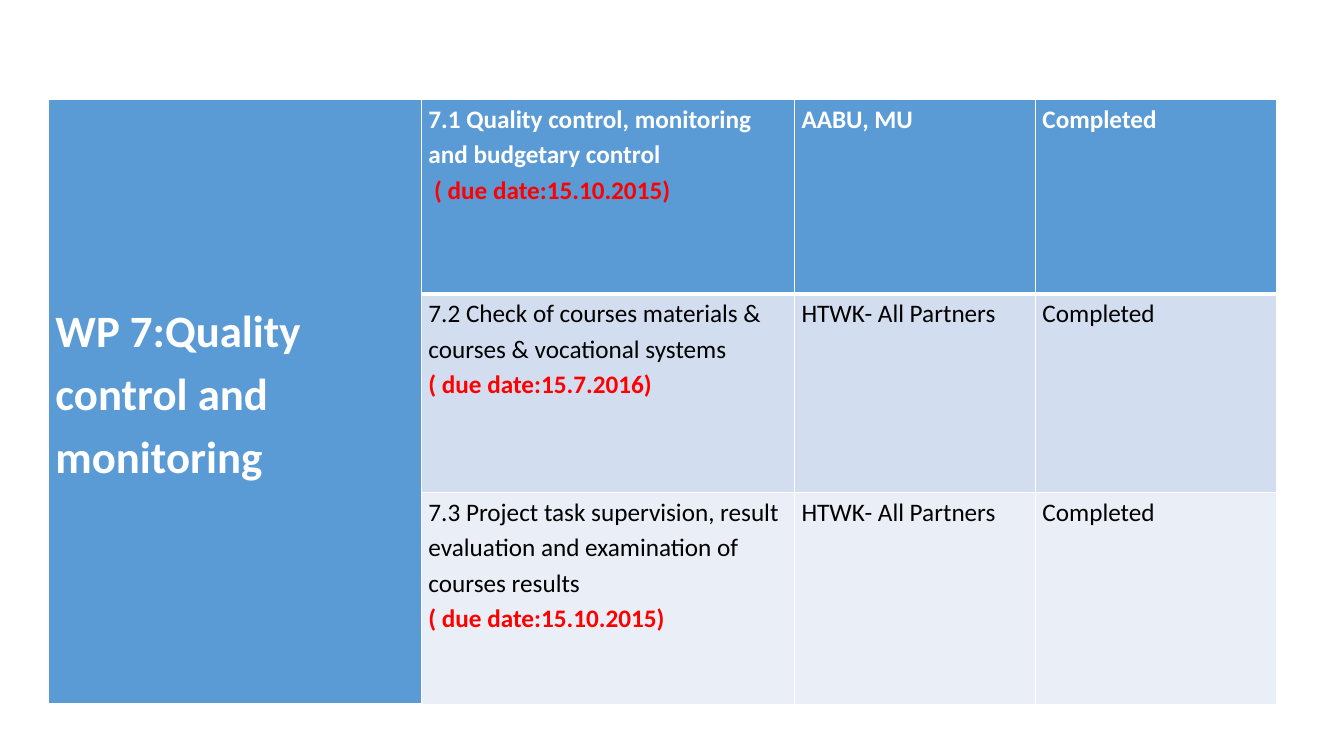
from lxml import etree
from pptx import Presentation
from pptx.dml.color import RGBColor
from pptx.enum.text import MSO_ANCHOR
from pptx.oxml.ns import qn
from pptx.util import Inches, Pt

MIDDLE = MSO_ANCHOR.MIDDLE
TOP = MSO_ANCHOR.TOP
WHITE, BLACK, RED = "FFFFFF", "000000", "FF0000"
COLUMN_WIDTHS = (3.7, 3.7, 2.39, 2.39)
ROW_HEIGHTS = (1.93, 1.97, 2.1)
ROW_FILLS = ("5B9BD5", "D2DEEF", "EAEFF7")
TITLE = "WP 7:Quality control and monitoring"
TASKS = (
    ("7.1 Quality control, monitoring and budgetary control",
     " ( due date:15.10.2015)", "AABU, MU", "Completed"),
    ("7.2 Check of courses materials & courses & vocational systems",
     "( due date:15.7.2016)", "HTWK- All Partners", "Completed"),
    ("7.3 Project task supervision, result evaluation and examination of courses results",
     "( due date:15.10.2015)", "HTWK- All Partners", "Completed"),
)


def rgb(value):
    return RGBColor.from_string(value)


def set_attributes(target, values):
    for name, value in values.items():
        setattr(target, name, value)


def add_borders(cell, bottom_width):
    """Draw white cell borders, with their own width at the bottom."""
    properties = cell._tc.get_or_add_tcPr()
    widths = {"a:lnL": 1, "a:lnR": 1, "a:lnT": 1, "a:lnB": bottom_width}
    for index, (tag, width) in enumerate(widths.items()):
        line = etree.Element(qn(tag), w=str(Pt(width)))
        fill = etree.SubElement(line, qn("a:solidFill"))
        etree.SubElement(fill, qn("a:srgbClr"), val=WHITE)
        properties.insert(index, line)


def format_cell(cell, fill, bottom_width=1):
    set_attributes(cell, {
        "margin_left": Inches(0.07), "margin_right": Inches(0.07),
        "margin_top": 0, "margin_bottom": 0, "vertical_anchor": TOP,
    })
    cell.fill.solid()
    cell.fill.fore_color.rgb = rgb(fill)
    add_borders(cell, bottom_width)


def write_paragraph(paragraph, text, color, bold, size=18, space_after=0):
    set_attributes(paragraph, {"line_spacing": 1.15, "space_after": Pt(space_after)})
    run = paragraph.add_run()
    run.text = text
    set_attributes(run.font, {"name": "Calibri", "size": Pt(size), "bold": bold})
    run.font.color.rgb = rgb(color)


def fill_task_row(table, row, task):
    is_header = row == 0
    color = WHITE if is_header else BLACK
    description, due_date, *details = task
    frame = table.cell(row, 1).text_frame
    write_paragraph(frame.paragraphs[0], description, color, is_header)
    write_paragraph(frame.add_paragraph(), due_date, RED, True)
    for column, text in enumerate(details, start=2):
        paragraph = table.cell(row, column).text_frame.paragraphs[0]
        write_paragraph(paragraph, text, color, is_header, space_after=10)


def fill_title_cell(table):
    cell = table.cell(0, 0)
    cell.merge(table.cell(len(TASKS) - 1, 0))
    set_attributes(cell, {"vertical_anchor": MIDDLE, "margin_bottom": Inches(0.23)})
    write_paragraph(cell.text_frame.paragraphs[0], TITLE, WHITE, True, size=32)


def add_work_package_table(slide):
    table = slide.shapes.add_table(
        len(ROW_HEIGHTS), len(COLUMN_WIDTHS), Inches(0.48), Inches(0.99),
        Inches(sum(COLUMN_WIDTHS)), Inches(sum(ROW_HEIGHTS))).table
    for column, width in zip(table.columns, COLUMN_WIDTHS):
        column.width = Inches(width)
    for row, (height, fill, task) in enumerate(zip(ROW_HEIGHTS, ROW_FILLS, TASKS)):
        table.rows[row].height = Inches(height)
        for column, cell in enumerate(table.rows[row].cells):
            format_cell(cell, ROW_FILLS[0] if column == 0 else fill,
                        bottom_width=3 if row == 0 else 1)
        fill_task_row(table, row, task)
    fill_title_cell(table)


def main():
    presentation = Presentation()
    set_attributes(presentation, {"slide_width": Inches(13.33), "slide_height": Inches(7.5)})
    slide = presentation.slides.add_slide(presentation.slide_layouts[6])
    add_work_package_table(slide)
    presentation.save("out.pptx")


if __name__ == "__main__":
    main()
